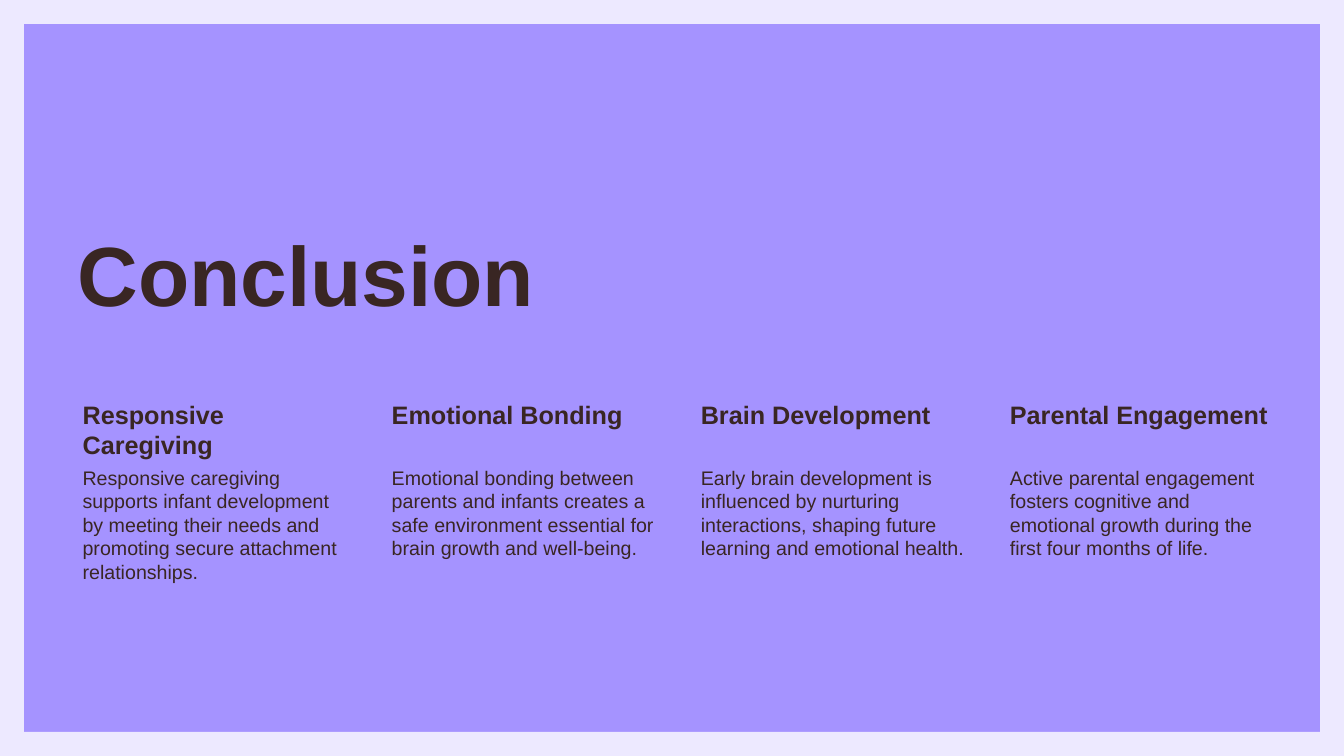
from pptx import Presentation
from pptx.dml.color import RGBColor
from pptx.enum.shapes import MSO_SHAPE
from pptx.enum.text import MSO_ANCHOR
from pptx.util import Pt

FRAME = MSO_SHAPE.FRAME
TOP, BOTTOM = MSO_ANCHOR.TOP, MSO_ANCHOR.BOTTOM

WIDTH, HEIGHT = 960, 540
BORDER = 17.1
LEFT, PITCH, COLUMN_WIDTH = 48.2, 220.8, 200.9
HEADING_TOP, HEADING_HEIGHT = 283, 48.2
BODY_HEIGHT = 167.8

COLUMNS = [
    ("Responsive Caregiving",
     "Responsive caregiving supports infant development by meeting their "
     "needs and promoting secure attachment relationships."),
    ("Emotional Bonding",
     "Emotional bonding between parents and infants creates a safe "
     "environment essential for brain growth and well-being."),
    ("Brain Development",
     "Early brain development is influenced by nurturing interactions, "
     "shaping future learning and emotional health."),
    ("Parental Engagement",
     "Active parental engagement fosters cognitive and emotional growth "
     "during the first four months of life."),
]


def color(value):
    return RGBColor.from_string(value)


class SlideBuilder:
    font = "Arial"
    ink = "392623"
    paper = "A593FF"
    edge = "EDE9FF"

    def __init__(self, slide):
        self.s = slide

    def background(self):
        fill = self.s.background.fill
        fill.solid()
        fill.fore_color.rgb = color(self.paper)

    def frame(self, x, y, w, h, thickness):
        sp = self.s.shapes.add_shape(FRAME, Pt(x), Pt(y), Pt(w), Pt(h))
        sp.adjustments[0] = thickness / min(w, h)
        sp.shadow.inherit = False
        sp.fill.solid()
        sp.fill.fore_color.rgb = color(self.edge)
        sp.line.fill.background()

    def text(self, text, x, y, w, h, *, size, bold=False, anchor=TOP,
             insets=(7.2, 3.6, 7.2, 3.6), spacing=1.0):
        tf = self.s.shapes.add_textbox(Pt(x), Pt(y), Pt(w), Pt(h)).text_frame
        tf.word_wrap = True
        tf.vertical_anchor = anchor
        (tf.margin_left, tf.margin_top,
         tf.margin_right, tf.margin_bottom) = map(Pt, insets)
        p = tf.paragraphs[0]
        p.line_spacing = spacing
        r = p.add_run()
        r.text = text
        r.font.name = self.font
        r.font.size = Pt(size)
        r.font.bold = bold
        r.font.color.rgb = color(self.ink)

    def column(self, x, heading, body):
        self.text(heading, x, HEADING_TOP, COLUMN_WIDTH, HEADING_HEIGHT,
                  size=18, bold=True, insets=(10.8, 2.2, 2.2, 2.2))
        self.text(body, x, HEADING_TOP + HEADING_HEIGHT, COLUMN_WIDTH,
                  BODY_HEIGHT, size=14, insets=(10.8, 1.4, 1.4, 1.4))


def main():
    prs = Presentation()
    prs.slide_width, prs.slide_height = Pt(WIDTH), Pt(HEIGHT)
    s = SlideBuilder(prs.slides.add_slide(prs.slide_layouts[6]))
    s.background()
    s.frame(0, 0, WIDTH, HEIGHT, BORDER)
    s.text("Conclusion", LEFT, 145.4, 578, 89.3, size=60, bold=True,
           anchor=BOTTOM, spacing=0.85)
    for i, (heading, body) in enumerate(COLUMNS):
        s.column(LEFT + i * PITCH, heading, body)
    prs.save("out.pptx")


if __name__ == "__main__":
    main()
